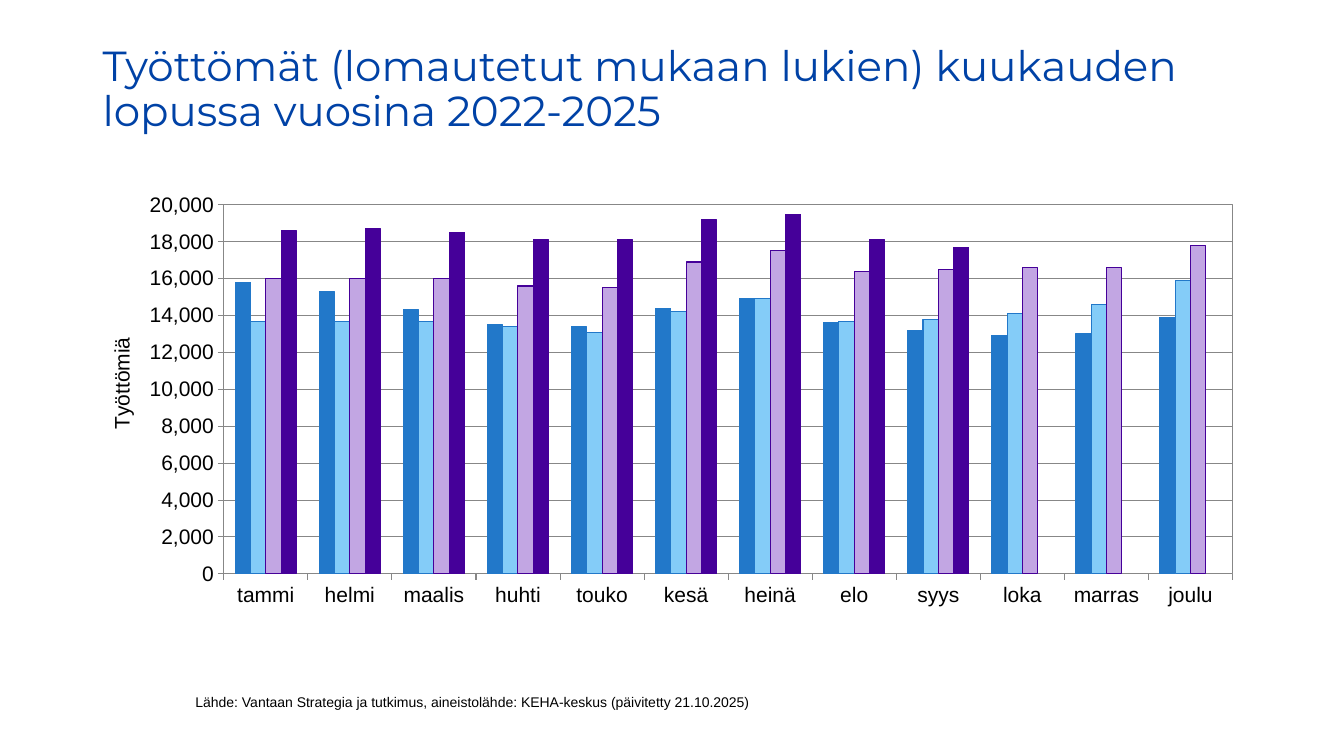
from dataclasses import dataclass
from typing import Optional

from lxml.etree import _Element
from pptx import Presentation
from pptx.chart.axis import _BaseAxis
from pptx.chart.data import CategoryChartData
from pptx.chart.series import BarSeries
from pptx.dml.color import RGBColor
from pptx.dml.line import LineFormat
from pptx.enum.chart import XL_CHART_TYPE, XL_TICK_MARK
from pptx.enum.text import MSO_ANCHOR
from pptx.oxml import parse_xml
from pptx.oxml.ns import nsdecls, qn
from pptx.slide import Slide
from pptx.util import Inches, Pt


@dataclass(frozen=True)
class Theme:
    title_font: str = "Montserrat"
    body_font: str = "Arial"
    title_color: str = "0042A6"
    text_color: str = "000000"
    grid_color: str = "878787"
    blue: str = "2278C9"
    light_blue: str = "84CCF8"
    lilac: str = "C2A6E3"
    purple: str = "450099"
    title_size: float = 30
    chart_size: float = 15
    source_size: float = 10
    line_width: float = 0.75


@dataclass(frozen=True)
class Label:
    text: str
    left: float
    top: float
    width: float
    height: float
    font: str
    size: float
    color: str
    line_spacing: float = 1.0


@dataclass(frozen=True)
class Year:
    name: str
    values: tuple[Optional[int], ...]
    fill: str
    outline: str


THEME = Theme()
MONTHS = ("tammi", "helmi", "maalis", "huhti", "touko", "kesä",
          "heinä", "elo", "syys", "loka", "marras", "joulu")
YEARS = (
    Year("2022", (15800, 15300, 14300, 13500, 13400, 14400,
                  14900, 13600, 13200, 12900, 13000, 13900), THEME.blue, THEME.blue),
    Year("2023", (13700, 13700, 13700, 13400, 13100, 14200,
                  14900, 13700, 13800, 14100, 14600, 15900), THEME.light_blue, THEME.blue),
    Year("2024", (16000, 16000, 16000, 15600, 15500, 16900,
                  17500, 16400, 16500, 16600, 16600, 17800), THEME.lilac, THEME.purple),
    Year("2025", (18600, 18700, 18500, 18100, 18100, 19200,
                  19500, 18100, 17700, None, None, None), THEME.purple, THEME.purple),
)
LABELS = (
    Label("Työttömät (lomautetut mukaan lukien) kuukauden lopussa vuosina 2022-2025",
          0.92, 0.4, 11.5, 1.45, THEME.title_font, THEME.title_size, THEME.title_color, 0.9),
    Label("Lähde: Vantaan Strategia ja tutkimus, aineistolähde: KEHA-keskus (päivitetty 21.10.2025)",
          1.84, 6.83, 5.83, 0.4, THEME.body_font, THEME.source_size, THEME.text_color),
)


def add_label(slide: Slide, label: Label) -> None:
    shape = slide.shapes.add_textbox(Inches(label.left), Inches(label.top),
                                     Inches(label.width), Inches(label.height))
    frame = shape.text_frame
    frame.word_wrap = True
    frame.vertical_anchor = MSO_ANCHOR.TOP
    paragraph = frame.paragraphs[0]
    paragraph.line_spacing = label.line_spacing
    run = paragraph.add_run()
    run.text = label.text
    run.font.name = label.font
    run.font.size = Pt(label.size)
    run.font.color.rgb = RGBColor.from_string(label.color)


def style_line(line: LineFormat, color: str) -> None:
    line.color.rgb = RGBColor.from_string(color)
    line.width = Pt(THEME.line_width)


def style_series(series: BarSeries, year: Year) -> None:
    series.invert_if_negative = False
    series.format.fill.solid()
    series.format.fill.fore_color.rgb = RGBColor.from_string(year.fill)
    style_line(series.format.line, year.outline)


def style_axis(axis: _BaseAxis) -> None:
    axis.major_tick_mark = XL_TICK_MARK.OUTSIDE
    axis.minor_tick_mark = XL_TICK_MARK.NONE
    style_line(axis.format.line, THEME.grid_color)


def set_layout(parent: _Element, index: int, settings: dict[str, object]) -> None:
    for old_layout in parent.findall(qn("c:layout")):
        parent.remove(old_layout)
    items = "".join(f'<c:{name} val="{value}"/>' for name, value in settings.items())
    parent.insert(index, parse_xml(
        f'<c:layout {nsdecls("c")}><c:manualLayout>{items}</c:manualLayout></c:layout>'))


def add_unemployment_chart(slide: Slide) -> None:
    data = CategoryChartData(number_format="#,##0")
    data.categories = MONTHS
    for year in YEARS:
        data.add_series(year.name, year.values)
    chart = slide.shapes.add_chart(XL_CHART_TYPE.COLUMN_CLUSTERED, Inches(0.92), Inches(1.85),
                                   Inches(11.5), Inches(4.56), data).chart
    chart.has_title = False
    chart.has_legend = False
    chart.font.name = THEME.body_font
    chart.font.size = Pt(THEME.chart_size)
    chart.font.color.rgb = RGBColor.from_string(THEME.text_color)

    plot = chart.plots[0]
    plot.vary_by_categories = False
    plot.gap_width = 150
    plot.overlap = 0
    for series, year in zip(plot.series, YEARS):
        style_series(series, year)

    style_axis(chart.category_axis)
    value_axis = chart.value_axis
    style_axis(value_axis)
    value_axis.minimum_scale = 0
    value_axis.maximum_scale = 20000
    value_axis.major_unit = 2000
    value_axis.tick_labels.number_format = "#,##0"
    value_axis.tick_labels.number_format_is_linked = False
    value_axis.has_major_gridlines = True
    style_line(value_axis.major_gridlines.format.line, THEME.grid_color)

    axis_title = value_axis.axis_title
    run = axis_title.text_frame.paragraphs[0].add_run()
    run.text = "Työttömiä"
    run.font.name = THEME.body_font
    run.font.size = Pt(THEME.chart_size)
    run.font.bold = False
    run.font.color.rgb = RGBColor.from_string(THEME.text_color)
    set_layout(axis_title._element, 1, {"xMode": "edge", "yMode": "edge", "x": 0.01, "y": 0.32})

    plot_area = chart._chartSpace.chart.plotArea
    set_layout(plot_area, 0, {"layoutTarget": "inner", "xMode": "edge", "yMode": "edge",
                              "x": 0.113, "y": 0.04, "w": 0.87, "h": 0.803})
    plot_area.append(parse_xml(
        f'<c:spPr {nsdecls("c", "a")}><a:noFill/><a:ln w="{Pt(THEME.line_width)}"><a:solidFill>'
        f'<a:srgbClr val="{THEME.grid_color}"/></a:solidFill></a:ln></c:spPr>'))


def main() -> None:
    presentation = Presentation()
    presentation.slide_width = Inches(13.33)
    presentation.slide_height = Inches(7.5)
    slide = presentation.slides.add_slide(presentation.slide_layouts[6])
    add_unemployment_chart(slide)
    for label in LABELS:
        add_label(slide, label)
    presentation.save("out.pptx")


if __name__ == "__main__":
    main()
